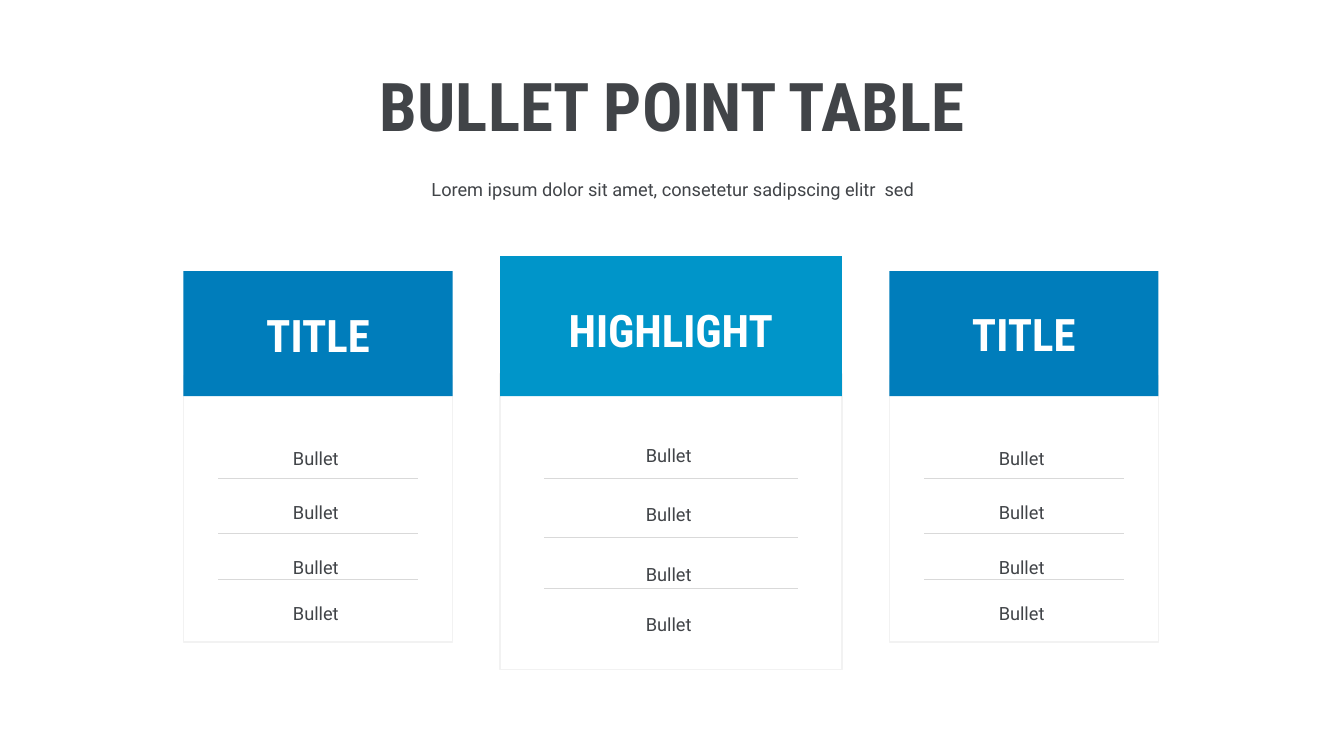
from lxml import etree
from pptx import Presentation
from pptx import util as u
from pptx.dml.color import RGBColor
from pptx.enum import shapes, text
from pptx.oxml import ns

INK = RGBColor(0x41, 0x44, 0x48)
WHITE = RGBColor(0xFF, 0xFF, 0xFF)
BLUE = RGBColor(0x00, 0x7D, 0xBB)
BRIGHT_BLUE = RGBColor(0x00, 0x95, 0xC9)
CARD_EDGE = RGBColor(0xF2, 0xF2, 0xF2)
RULE_GREY = RGBColor(0xD9, 0xD9, 0xD9)

HEADER_BOTTOM = 3.93
HEADING_WIDTH = 2.57
BULLET_WIDTHS = (1.85, 2.57, 1.71, 1.82)
SIDE_BULLETS = (4.28, 4.82, 5.36, 5.82)
SIDE_RULES = (4.75, 5.29, 5.75)


class SlideBuilder:
    heading_font = "Roboto Condensed"
    body_font = "Roboto"

    def __init__(self, slide):
        self.slide = slide

    def set_text(self, box, words, size, color=INK, heading=False, spacing=1.0):
        frame = box.text_frame
        frame.word_wrap = True
        frame.auto_size = text.MSO_AUTO_SIZE.SHAPE_TO_FIT_TEXT
        frame.vertical_anchor = text.MSO_ANCHOR.TOP
        line = frame.paragraphs[0]
        line.alignment = text.PP_ALIGN.CENTER
        line.line_spacing = spacing
        line.space_before = u.Pt(0)
        run = line.add_run()
        run.text = words
        run.font.name = self.heading_font if heading else self.body_font
        run.font.size = u.Pt(size)
        run.font.bold = heading
        run.font.color.rgb = color

    def placeholder(self, index, left, top, width, height, words, size, **style):
        holder = self.slide.placeholders[index]
        holder.left, holder.top = u.Inches(left), u.Inches(top)
        holder.width, holder.height = u.Inches(width), u.Inches(height)
        self.set_text(holder, words, size, **style)

    def label(self, center, top, width, height, words, size, **style):
        box = self.slide.shapes.add_textbox(
            u.Inches(center - width / 2), u.Inches(top), u.Inches(width), u.Inches(height))
        self.set_text(box, words, size, **style)

    def panel(self, left, top, width, bottom, fill, edge=None):
        panel = self.slide.shapes.add_shape(
            shapes.MSO_SHAPE.RECTANGLE, u.Inches(left), u.Inches(top),
            u.Inches(width), u.Inches(bottom - top))
        panel.shadow.inherit = False
        panel.fill.solid()
        panel.fill.fore_color.rgb = fill
        if edge is None:
            panel.line.fill.background()
        else:
            panel.line.color.rgb = edge
            panel.line.width = u.Pt(1)

    def rule(self, center, y, width):
        rule = self.slide.shapes.add_connector(
            shapes.MSO_CONNECTOR.STRAIGHT, u.Inches(center - width / 2), u.Inches(y),
            u.Inches(center + width / 2), u.Inches(y))
        rule.line.color.rgb = RULE_GREY
        rule.line.width = u.Pt(0.5)
        etree.SubElement(rule._element.spPr, ns.qn("a:effectLst"))

    def card(self, heading, left, width, top, body_top, bottom, color,
             heading_top, bullet_tops, rule_tops, rule_width):
        center = left + width / 2
        self.panel(left, body_top, width, bottom, WHITE, CARD_EDGE)
        self.panel(left, top, width, HEADER_BOTTOM, color)
        self.label(center, heading_top, HEADING_WIDTH, 0.64, heading, 32,
                   color=WHITE, heading=True)
        for y in rule_tops:
            self.rule(center, y, rule_width)
        for y, bullet_width in zip(bullet_tops, BULLET_WIDTHS):
            self.label(center, y, bullet_width, 0.41, "Bullet ", 13, spacing=1.5)


def main():
    deck = Presentation()
    deck.slide_width, deck.slide_height = u.Inches(13.33), u.Inches(7.5)
    page = SlideBuilder(deck.slides.add_slide(deck.slide_layouts[0]))

    # Title and subtitle
    page.placeholder(0, 1.38, 0.59, 10.58, 0.91, "BULLET POINT TABLE", 48, heading=True)
    page.placeholder(1, 1.9, 1.68, 9.54, 0.36,
                     "Lorem ipsum dolor sit amet, consetetur sadipscing elitr  sed",
                     13, spacing=1.2)

    # Side cards
    for left, heading_top in ((1.82, 3.0), (8.82, 2.99)):
        page.card("TITLE", left, 2.67, 2.69, 3.73, 6.37, BLUE,
                  heading_top, SIDE_BULLETS, SIDE_RULES, 1.98)

    # Highlighted card
    page.card("HIGHLIGHT", 4.96, 3.39, 2.54, 3.71, 6.64, BRIGHT_BLUE,
              2.95, (4.25, 4.84, 5.43, 5.93), (4.75, 5.33, 5.84), 2.51)

    deck.save("out.pptx")


if __name__ == "__main__":
    main()
